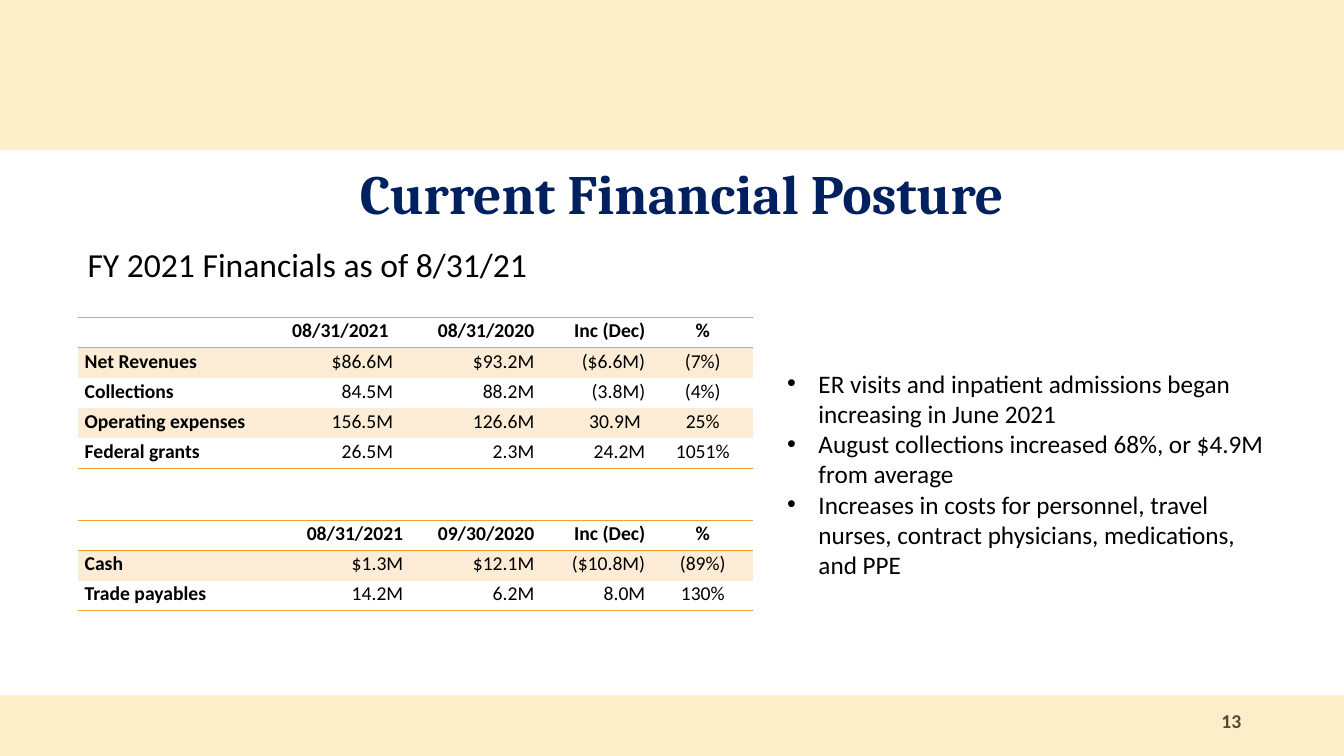
import lxml.etree
import pptx
import pptx.dml.color
import pptx.enum.shapes
import pptx.enum.text
import pptx.oxml.ns
import pptx.util

Inches = pptx.util.Inches
Pt = pptx.util.Pt
qn = pptx.oxml.ns.qn
RGB = pptx.dml.color.RGBColor
ALIGN = pptx.enum.text.PP_ALIGN
ANCHOR = pptx.enum.text.MSO_ANCHOR
RECTANGLE = pptx.enum.shapes.MSO_SHAPE.RECTANGLE

CREAM = RGB(0xFB, 0xEE, 0xC9)
NAVY = RGB(0x00, 0x20, 0x60)
BLACK = RGB(0x00, 0x00, 0x00)
BROWN = RGB(0x62, 0x41, 0x39)
WHITE = RGB(0xFF, 0xFF, 0xFF)
ROW_TINT = RGB(0xFC, 0xEC, 0xD5)
RULE_ORANGE = RGB(0xF0, 0xA2, 0x2E)

PLAIN_TABLE_STYLE = "{2D5ABB26-0587-4C30-8999-92F81FD0307C}"
SLIDE_WIDTH, SLIDE_HEIGHT = 13.33, 7.5
ROW_HEIGHT = 0.3

RESULTS_COLUMNS = [2, 1.2, 0.2, 1.2, 0.2, 0.9, 1]
RESULTS = [
    ["", "08/31/2021 ", "", "08/31/2020", "", "Inc (Dec)", "%"],
    ["Net Revenues", "$86.6M", "", "$93.2M", "", "($6.6M)", "(7%)"],
    ["Collections", "84.5M", "", "88.2M", "", "(3.8M)", "(4%)"],
    ["Operating expenses", "156.5M", "", "126.6M", "", "30.9M ", "25%"],
    ["Federal grants", "26.5M", "", "2.3M", "", "24.2M", "1051%"],
]
BALANCES_COLUMNS = [2, 1.3, 1.3, 1.1, 1]
BALANCES = [
    ["", "08/31/2021", "09/30/2020", "Inc (Dec)", "%"],
    ["Cash", "$1.3M", "$12.1M", "($10.8M)", "(89%)"],
    ["Trade payables", "14.2M", "6.2M", "8.0M", "130%"],
]
COMMENTS = [
    "ER visits and inpatient admissions began increasing in June 2021",
    "August collections increased 68%, or $4.9M from average",
    "Increases in costs for personnel, travel nurses, contract physicians, "
    "medications, and PPE",
]


def write(paragraph, text, size=14, font="Calibri", color=BLACK, bold=False,
          align=ALIGN.LEFT, spacing=None, bullet_indent=None):
    """Put formatted text in a paragraph; empty text still sets the line size."""
    paragraph.alignment = align
    if spacing:
        paragraph.line_spacing = spacing
    if bullet_indent:
        properties = paragraph._p.get_or_add_pPr()
        properties.set("marL", str(Inches(bullet_indent)))
        properties.set("indent", str(-Inches(bullet_indent)))
        lxml.etree.SubElement(properties, qn("a:buFont")).set("typeface", "Arial")
        lxml.etree.SubElement(properties, qn("a:buChar")).set("char", "•")
    if not text:
        end = lxml.etree.SubElement(paragraph._p, qn("a:endParaRPr"))
        end.set("sz", str(size * 100))
        return
    run = paragraph.add_run()
    run.text = text
    run.font.size = Pt(size)
    run.font.name = font
    run.font.bold = bold
    run.font.color.rgb = color


def add_rectangle(slide, left, top, width, height, color):
    rectangle = slide.shapes.add_shape(
        RECTANGLE, Inches(left), Inches(top), Inches(width), Inches(height))
    rectangle.shadow.inherit = False
    rectangle.fill.solid()
    rectangle.fill.fore_color.rgb = color
    rectangle.line.fill.background()
    return rectangle


def add_label(slide, left, top, width, height, text, anchor=ANCHOR.MIDDLE, **style):
    label = slide.shapes.add_textbox(
        Inches(left), Inches(top), Inches(width), Inches(height))
    label.text_frame.word_wrap = True
    label.text_frame.vertical_anchor = anchor
    write(label.text_frame.paragraphs[0], text, **style)


def add_rule(cell, side):
    """Draw an orange line along a cell side, 'T' or 'B'."""
    properties = cell._tc.get_or_add_tcPr()
    line = lxml.etree.SubElement(properties, qn("a:ln" + side))
    line.set("w", str(Pt(1)))
    fill = lxml.etree.SubElement(line, qn("a:solidFill"))
    lxml.etree.SubElement(fill, qn("a:srgbClr")).set("val", str(RULE_ORANGE))


def add_financial_table(slide, left, top, column_widths, rows):
    table = slide.shapes.add_table(
        len(rows), len(column_widths), Inches(left), Inches(top),
        Inches(sum(column_widths)), Inches(ROW_HEIGHT * len(rows))).table
    table._tbl.tblPr.find(qn("a:tableStyleId")).text = PLAIN_TABLE_STYLE
    table.first_row = False
    table.horz_banding = False
    for column, width in zip(table.columns, column_widths):
        column.width = Inches(width)
    last_row, last_column = len(rows) - 1, len(column_widths) - 1
    alignments = {0: ALIGN.LEFT, last_column: ALIGN.CENTER}
    for r, values in enumerate(rows):
        table.rows[r].height = Inches(ROW_HEIGHT)
        for c, value in enumerate(values):
            cell = table.cell(r, c)
            cell.margin_left = cell.margin_right = Inches(0.07)
            cell.margin_top = cell.margin_bottom = 0
            write(cell.text_frame.paragraphs[0], value, bold=r == 0 or c == 0,
                  align=alignments.get(c, ALIGN.RIGHT), spacing=1.07)
            if r == 0:
                add_rule(cell, "T")
            if r in (0, last_row):
                add_rule(cell, "B")
            if r % 2:
                cell.fill.solid()
                cell.fill.fore_color.rgb = ROW_TINT
            else:
                cell.fill.background()


def add_comments(slide, left, top, width, height):
    frame = add_rectangle(slide, left, top, width, height, WHITE).text_frame
    frame.word_wrap = True
    frame.vertical_anchor = ANCHOR.MIDDLE
    for i, comment in enumerate(COMMENTS):
        paragraph = frame.add_paragraph() if i else frame.paragraphs[0]
        write(paragraph, comment, size=18, bullet_indent=0.31)


def add_bands(slide, top_height, bottom_height):
    add_rectangle(slide, 0, SLIDE_HEIGHT - bottom_height, SLIDE_WIDTH,
                  bottom_height, CREAM)
    add_rectangle(slide, 0, 0, SLIDE_WIDTH, top_height, CREAM)


def main():
    presentation = pptx.Presentation()
    presentation.slide_width = Inches(SLIDE_WIDTH)
    presentation.slide_height = Inches(SLIDE_HEIGHT)
    slide = presentation.slides.add_slide(presentation.slide_layouts[6])
    add_bands(slide, 1.49, 0.6)
    add_label(slide, 3.47, 1.55, 6.9, 0.72, "Current Financial Posture",
              size=39.6, font="Cambria", color=NAVY, bold=True)
    add_label(slide, 0.77, 2.42, 7.87, 4.14, "FY 2021 Financials as of 8/31/21",
              anchor=ANCHOR.TOP, size=24, spacing=0.9)
    add_financial_table(slide, 0.77, 3.15, RESULTS_COLUMNS, RESULTS)
    add_financial_table(slide, 0.77, 5.16, BALANCES_COLUMNS, BALANCES)
    add_comments(slide, 7.71, 3.59, 5.03, 2.22)
    add_label(slide, 8.83, 6.95, 3.58, 0.4, "13", color=BROWN, bold=True,
              align=ALIGN.RIGHT)
    presentation.save("out.pptx")


if __name__ == "__main__":
    main()
